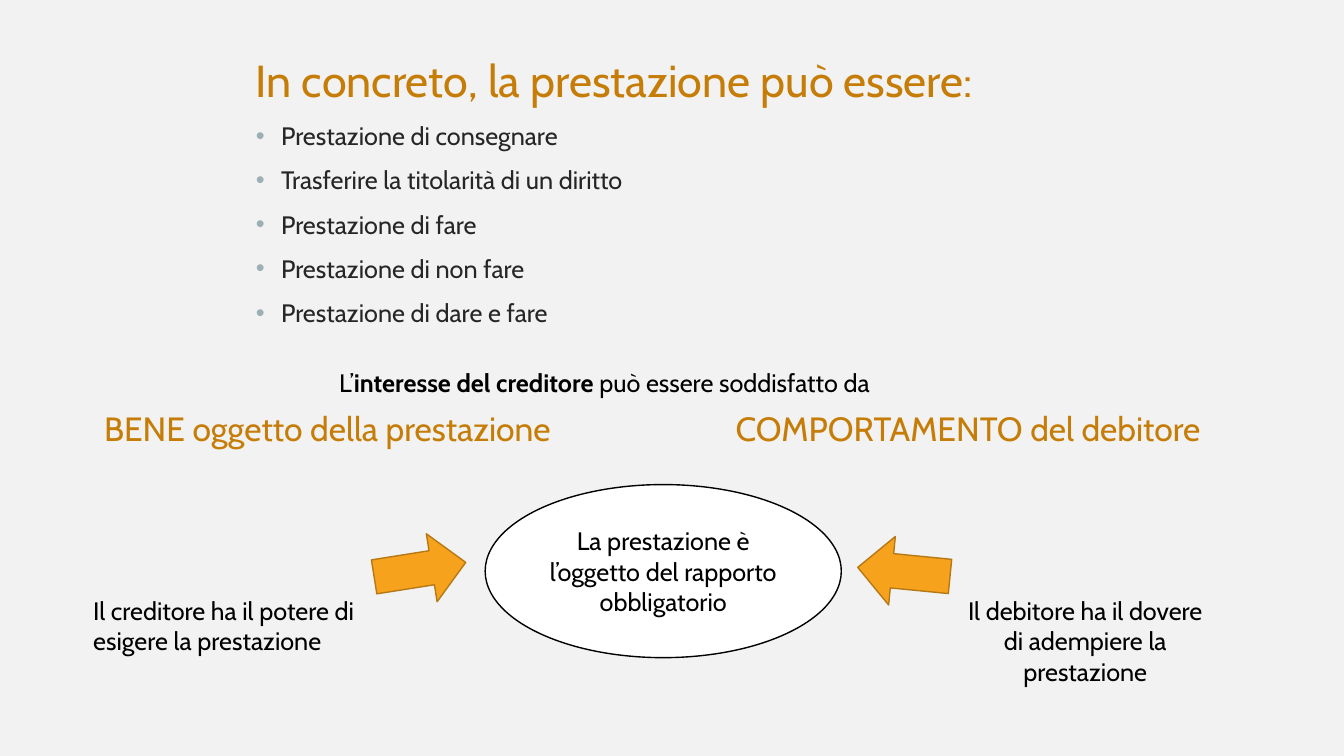
import dataclasses

import pptx
import pptx.dml.color
import pptx.enum.shapes
import pptx.enum.text
import pptx.oxml
import pptx.oxml.ns
import pptx.util

SHAPES = pptx.enum.shapes.MSO_SHAPE
ALIGN = pptx.enum.text.PP_ALIGN


@dataclasses.dataclass(frozen=True)
class Theme:
    font: str = "Cabin"
    background: str = "F2F2F2"
    accent: str = "C67D08"
    body: str = "262626"
    ink: str = "000000"
    paper: str = "FFFFFF"
    bullet: str = "9BAFB5"
    arrow: str = "F6A21D"
    arrow_edge: str = "B67815"
    title_size: int = 32
    heading_size: int = 24
    text_size: int = 18
    list_gap: int = 10
    list_indent: float = 0.25


def rgb(value):
    return pptx.dml.color.RGBColor.from_string(value)


class Page:
    """One slide; every area is (left, top, width, height) in percent of it."""

    def __init__(self, deck, theme):
        self.deck = deck
        self.theme = theme
        self.slide = deck.slides.add_slide(deck.slide_layouts[6])
        self.slide.background.fill.solid()
        self.slide.background.fill.fore_color.rgb = rgb(theme.background)

    def place(self, area):
        sides = (self.deck.slide_width, self.deck.slide_height) * 2
        return [round(side * share / 100) for side, share in zip(sides, area)]

    def style(self, para, size, color, align=ALIGN.LEFT):
        para.alignment = align
        para.font.name = self.theme.font
        para.font.size = pptx.util.Pt(size)
        para.font.color.rgb = rgb(color)

    def text_box(self, area):
        box = self.slide.shapes.add_textbox(*self.place(area))
        box.text_frame.word_wrap = True
        return box.text_frame

    def text(self, area, spans, size=None, color=None, align=ALIGN.LEFT):
        """Add one paragraph made of (words, bold) spans."""
        para = self.text_box(area).paragraphs[0]
        for words, bold in spans:
            span = para.add_run()
            span.text = words
            if bold:
                span.font.bold = True
        self.style(para, size or self.theme.text_size, color or self.theme.ink, align)

    def bullet(self, para):
        indent = pptx.util.Inches(self.theme.list_indent)
        properties = para._p.get_or_add_pPr()
        properties.set("marL", str(indent))
        properties.set("indent", str(-indent))
        namespace = pptx.oxml.ns.nsdecls("a")
        for element in (
            f'<a:buClr {namespace}><a:srgbClr val="{self.theme.bullet}"/></a:buClr>',
            f'<a:buFont {namespace} typeface="Arial"/>',
            f'<a:buChar {namespace} char="•"/>',
        ):
            properties.append(pptx.oxml.parse_xml(element))

    def titled_list(self, area, title, items):
        frame = self.text_box(area)
        frame.text = title
        self.style(frame.paragraphs[0], self.theme.title_size, self.theme.accent)
        for item in items:
            para = frame.add_paragraph()
            para.text = item
            self.bullet(para)
            para.space_before = pptx.util.Pt(self.theme.list_gap)
            self.style(para, self.theme.text_size, self.theme.body)

    def shape(self, kind, area, fill, line):
        shape = self.slide.shapes.add_shape(kind, *self.place(area))
        shape.shadow.inherit = False
        shape.fill.solid()
        shape.fill.fore_color.rgb = rgb(fill)
        shape.line.color.rgb = rgb(line)
        shape.line.width = pptx.util.Pt(1)
        return shape

    def ellipse(self, area, words):
        shape = self.shape(SHAPES.OVAL, area, self.theme.paper, self.theme.ink)
        frame = shape.text_frame
        frame.word_wrap = True
        frame.vertical_anchor = pptx.enum.text.MSO_ANCHOR.MIDDLE
        frame.text = words
        self.style(frame.paragraphs[0], self.theme.text_size, self.theme.ink, ALIGN.CENTER)

    def arrow(self, area, rotation):
        shape = self.shape(SHAPES.RIGHT_ARROW, area, self.theme.arrow, self.theme.arrow_edge)
        shape.rotation = rotation


def main():
    deck = pptx.Presentation()
    deck.slide_width = pptx.util.Inches(13.33)
    deck.slide_height = pptx.util.Inches(7.5)
    theme = Theme()
    page = Page(deck, theme)

    page.titled_list(
        (18.3, 6.3, 63.4, 38),
        "In concreto, la prestazione può essere:",
        [
            "Prestazione di consegnare",
            "Trasferire la titolarità di un diritto",
            "Prestazione di fare",
            "Prestazione di non fare",
            "Prestazione di dare e fare",
        ],
    )
    page.text(
        (24.5, 47.9, 50.9, 5.3),
        [("L’", False), ("interesse del creditore ", True), ("può essere soddisfatto da", False)],
    )
    for left, width, heading in (
        (7, 37.3, "BENE oggetto della prestazione"),
        (54, 38.4, "COMPORTAMENTO del debitore"),
    ):
        page.text((left, 53.3, width, 6.7), [(heading, False)], theme.heading_size, theme.accent)

    page.ellipse((36.1, 64.1, 26.5, 22.9), "La prestazione è l’oggetto del rapporto obbligatorio")
    page.arrow((27.8, 70.8, 6.9, 9.1), 351)
    page.arrow((63.8, 71.1, 6.9, 9.1), 185.6)
    page.text(
        (6.2, 78.1, 21.5, 9.5),
        [("Il creditore ha il potere di esigere la prestazione", False)],
    )
    page.text(
        (70.9, 78.1, 19.7, 13.5),
        [("Il debitore ha il dovere di adempiere la prestazione", False)],
        align=ALIGN.CENTER,
    )
    deck.save("out.pptx")


if __name__ == "__main__":
    main()
